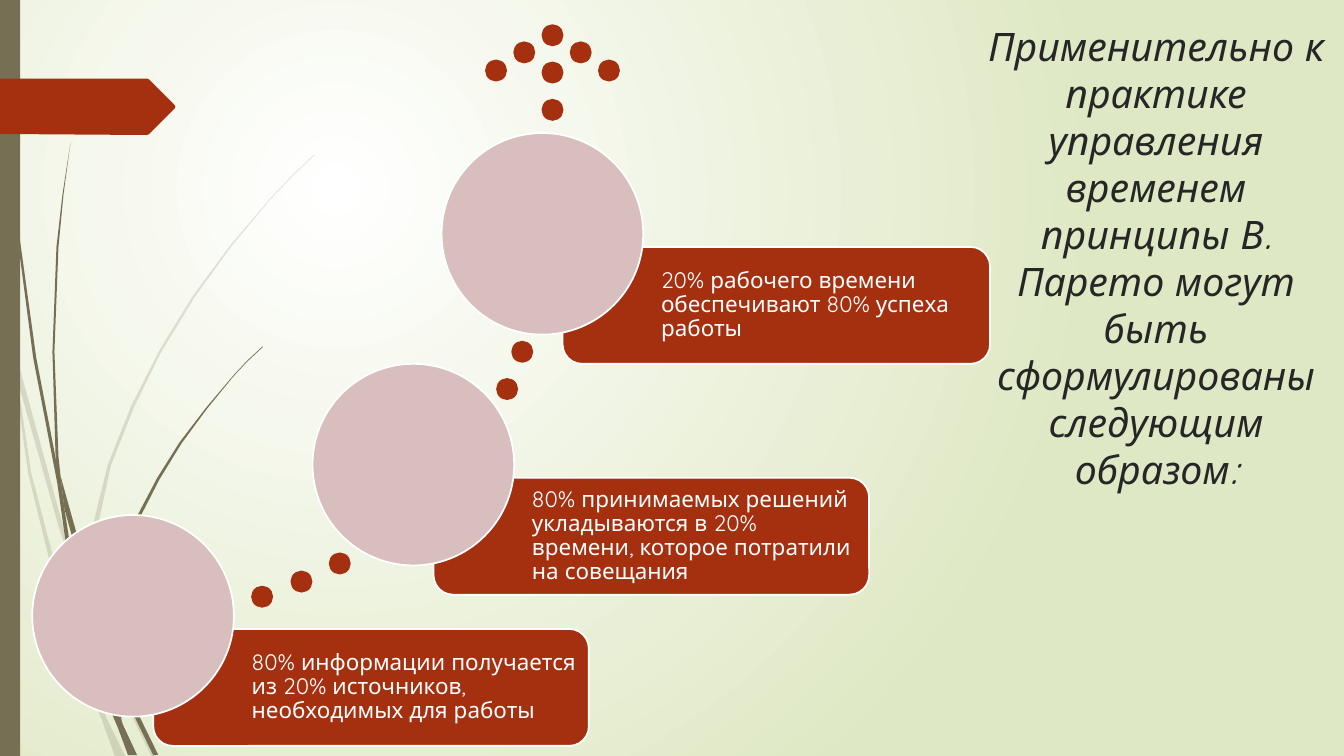
from lxml import etree
from pptx import Presentation
from pptx.dml.color import RGBColor
from pptx.enum.shapes import MSO_SHAPE
from pptx.enum.text import MSO_ANCHOR, PP_ALIGN
from pptx.oxml.ns import qn
from pptx.util import Emu, Pt

OVAL = MSO_SHAPE.OVAL
RECTANGLE = MSO_SHAPE.RECTANGLE
ROUNDED = MSO_SHAPE.ROUNDED_RECTANGLE
TOP, MIDDLE = MSO_ANCHOR.TOP, MSO_ANCHOR.MIDDLE
LEFT, CENTER = PP_ALIGN.LEFT, PP_ALIGN.CENTER

PX = 9144
PAGE_WIDTH, PAGE_HEIGHT = 1333, 750
FONT = "Quicksand"

WHITE = RGBColor(0xFF, 0xFF, 0xFF)
PALE_GREEN = RGBColor(0xDF, 0xE8, 0xC4)
OLIVE = RGBColor(0x76, 0x6F, 0x54)
RUST = RGBColor(0xA5, 0x30, 0x10)
ROSE = RGBColor(0xD8, 0xBE, 0xBD)
INK = RGBColor(0x26, 0x26, 0x26)

PALE_BLADES = [
    [(0, 282), (9, 322), (11, 350), (17, 376), (31, 469), (70, 619), (93, 683),
     (96, 692), (105, 711), (124, 750), (114, 750), (101, 714), (92, 693),
     (65, 621), (28, 470), (11, 350), (10, 344), (0, 299)],
    [(14, 345), (62, 520), (85, 586), (92, 607), (127, 692), (155, 750),
     (150, 750), (123, 694), (88, 610), (91, 646), (103, 706), (105, 711),
     (96, 692), (93, 683), (87, 646), (84, 599), (58, 522), (17, 376)],
    [(88, 596), (88, 584), (97, 522), (110, 462), (133, 404), (160, 349),
     (193, 295), (229, 245), (268, 198), (290, 175), (312, 154), (312, 153),
     (289, 175), (268, 197), (228, 244), (191, 294), (158, 348), (130, 403),
     (107, 461), (92, 522), (85, 584), (85, 586)],
]
DARK_BLADES = [
    [(3, 0), (4, 0), (5, 48), (8, 109), (19, 232), (36, 355), (55, 453),
     (64, 505), (72, 556), (98, 657), (110, 691), (122, 719), (136, 749),
     (127, 749), (117, 722), (111, 708), (93, 659), (68, 557), (57, 480),
     (33, 355), (17, 233), (7, 110), (4, 48)],
    [(60, 472), (93, 590), (106, 631), (113, 649), (136, 706), (157, 749),
     (152, 749), (132, 708), (111, 656), (121, 716), (122, 719), (110, 691),
     (106, 645), (88, 592), (64, 505)],
    [(70, 141), (63, 193), (58, 245), (54, 349), (58, 453), (60, 472),
     (64, 505), (57, 477), (55, 449), (52, 349), (56, 245), (62, 193)],
    [(110, 641), (111, 633), (115, 592), (125, 552), (139, 513), (158, 476),
     (180, 440), (205, 406), (231, 374), (245, 359), (261, 344), (260, 344),
     (245, 358), (231, 373), (204, 405), (178, 439), (156, 474), (136, 512),
     (122, 551), (111, 591), (106, 631)],
]
TAG = [(0, 0), (146, 0), (148, 1), (173, 26), (174, 28), (173, 30),
       (148, 55), (146, 56), (0, 55)]

DOT = 20
TRAIL = [(327, 549), (289, 567), (250, 582), (508, 339), (493, 376)]
ARROW_TIP = (538, 25)
ARROW = [(-56, 35), (-28, 17), (0, 0), (28, 17), (56, 35), (0, 37), (0, 74)]

TITLE = ("Применительно к практике управления временем принципы В. Парето "
         "могут быть сформулированы следующим образом:")
CARDS = [
    ((152, 624, 432, 116),
     "80% информации получается из 20% источников, необходимых для работы"),
    ((430, 474, 432, 116),
     "80% принимаемых решений укладываются в 20% времени, "
     "которое потратили на совещания"),
    ((558, 245, 424, 116),
     "20% рабочего времени обеспечивают 80% успеха работы"),
]


def px(length):
    return Emu(length * PX)


def paint(shape, color, outline=None):
    shape.shadow.inherit = False
    shape.fill.solid()
    shape.fill.fore_color.rgb = color
    if outline is None:
        shape.line.fill.background()
    else:
        shape.line.color.rgb = outline
        shape.line.width = Pt(1.25)


def add_preset(page, kind, box, color, outline=None):
    shape = page.shapes.add_shape(kind, *map(px, box))
    paint(shape, color, outline)
    return shape


def add_outline(page, origin, points, color, opacity=100):
    builder = page.shapes.build_freeform(*points[0], scale=PX)
    builder.add_line_segments(points[1:], close=True)
    shape = builder.convert_to_shape(*map(px, origin))
    paint(shape, color)
    if opacity < 100:
        tint = shape._element.spPr.find(qn("a:solidFill"))[0]
        etree.SubElement(tint, qn("a:alpha"), val=str(opacity * 1000))


def write(frame, text, size, color, margins, anchor, alignment, italic=False):
    frame.word_wrap = True
    frame.vertical_anchor = anchor
    (frame.margin_left, frame.margin_top,
     frame.margin_right, frame.margin_bottom) = map(px, margins)
    para = frame.paragraphs[0]
    para.alignment = alignment
    span = para.add_run()
    span.text = text
    span.font.name = FONT
    span.font.size = Pt(size)
    span.font.italic = italic
    span.font.color.rgb = color
    return para


def fill_background(page):
    fill = page.background.fill
    fill.gradient()
    for stop, color, position in zip(fill.gradient_stops, (WHITE, PALE_GREEN), (0, 1)):
        stop.color.rgb = color
        stop.position = position
    gradient = page._element.find(".//" + qn("a:gradFill"))
    gradient.remove(gradient.find(qn("a:lin")))
    circle = etree.SubElement(gradient, qn("a:path"), attrib={"path": "circle"})
    etree.SubElement(circle, qn("a:fillToRect"),
                     l="50000", t="50000", r="100000", b="100000")


def draw_side(page, box):
    left, top, width, height = box
    for blades, opacity in ((PALE_BLADES, 20), (DARK_BLADES, 100)):
        for blade in blades:
            add_outline(page, (left, top), blade, OLIVE, opacity)
    add_preset(page, RECTANGLE, (left, top, width, height), OLIVE)
    add_outline(page, (left, top + 78), TAG, RUST)


def draw_title(page, box):
    frame = page.shapes.add_textbox(*map(px, box)).text_frame
    write(frame, TITLE, 28, INK, (10, 5, 10, 5), TOP, CENTER, italic=True)


def draw_dots(page, origin, offsets):
    left, top = origin
    for across, down in offsets:
        add_preset(page, OVAL, (left + across, top + down, DOT, DOT), RUST, RUST)


def draw_card(page, box, text):
    left, top, width, height = box
    card = add_preset(page, ROUNDED, box, RUST, WHITE)
    para = write(card.text_frame, text, 16, WHITE, (92, 7, 7, 7), MIDDLE, LEFT)
    para.line_spacing = 0.9
    add_preset(page, OVAL, (left - 120, top - 113, 200, 200), ROSE, WHITE)


def main():
    deck = Presentation()
    deck.slide_width, deck.slide_height = px(PAGE_WIDTH), px(PAGE_HEIGHT)
    page = deck.slides.add_slide(deck.slide_layouts[6])
    fill_background(page)
    draw_side(page, (0, 0, 20, PAGE_HEIGHT))
    draw_title(page, (969, 17, 355, 140))
    draw_dots(page, (0, 0), TRAIL)
    draw_dots(page, ARROW_TIP, ARROW)
    for box, text in CARDS:
        draw_card(page, box, text)
    deck.save("out.pptx")


if __name__ == "__main__":
    main()
